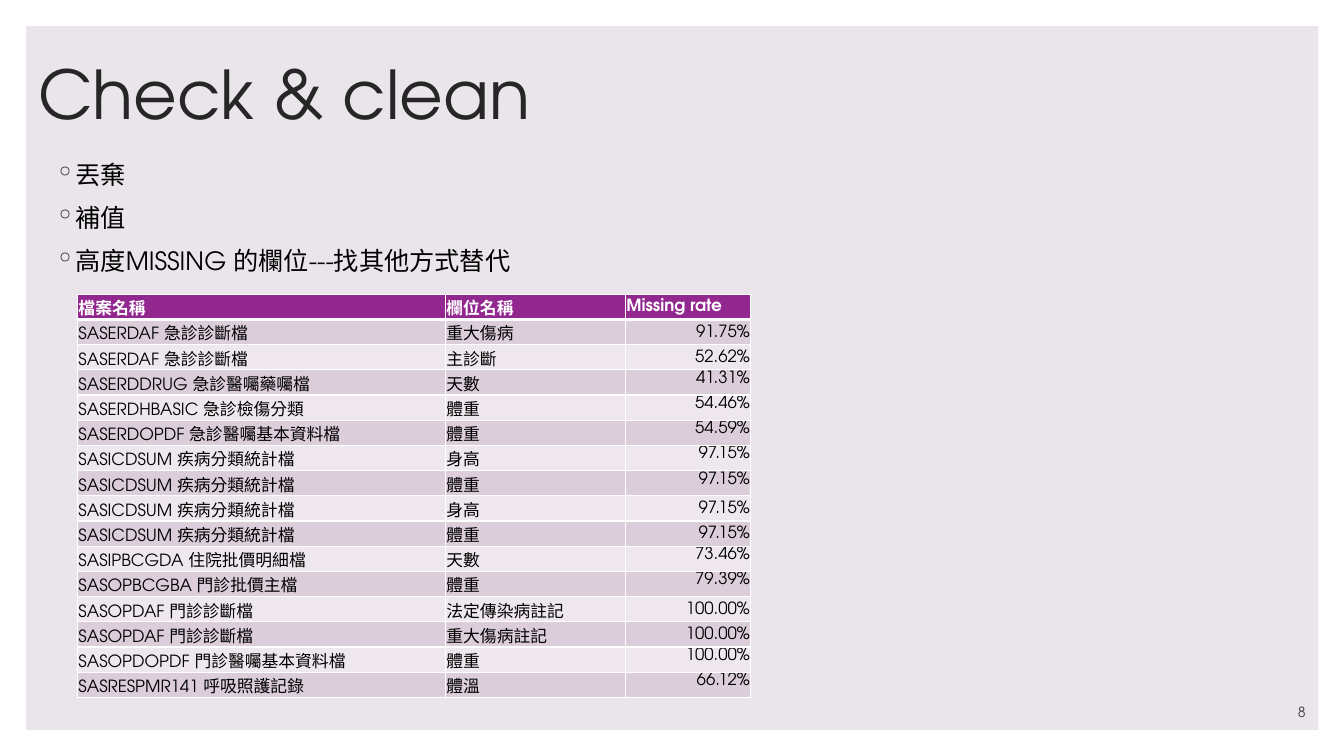
from lxml.etree import SubElement
from pptx import Presentation
from pptx.dml.color import RGBColor
from pptx.enum.shapes import MSO_SHAPE
from pptx.enum.text import MSO_ANCHOR, PP_ALIGN
from pptx.oxml.ns import qn
from pptx.util import Pt

HEADER = ("檔案名稱", "欄位名稱", "Missing rate")
MISSING_RATES = [
    ("SASERDAF 急診診斷檔", "重大傷病", "91.75%"),
    ("SASERDAF 急診診斷檔", "主診斷", "52.62%"),
    ("SASERDDRUG 急診醫囑藥囑檔", "天數", "41.31%"),
    ("SASERDHBASIC 急診檢傷分類", "體重", "54.46%"),
    ("SASERDOPDF 急診醫囑基本資料檔", "體重", "54.59%"),
    ("SASICDSUM 疾病分類統計檔", "身高", "97.15%"),
    ("SASICDSUM 疾病分類統計檔", "體重", "97.15%"),
    ("SASICDSUM 疾病分類統計檔", "身高", "97.15%"),
    ("SASICDSUM 疾病分類統計檔", "體重", "97.15%"),
    ("SASIPBCGDA 住院批價明細檔", "天數", "73.46%"),
    ("SASOPBCGBA 門診批價主檔", "體重", "79.39%"),
    ("SASOPDAF 門診診斷檔", "法定傳染病註記", "100.00%"),
    ("SASOPDAF 門診診斷檔", "重大傷病註記", "100.00%"),
    ("SASOPDOPDF 門診醫囑基本資料檔", "體重", "100.00%"),
    ("SASRESPMR141 呼吸照護記錄", "體溫", "66.12%"),
]
TOP_ROWS = {3, 4, 5, 6, 7, 10, 11, 14, 15}


def rgb(color):
    return RGBColor.from_string(color)


def write(p, text, size, color="000000", bold=False, align=PP_ALIGN.LEFT, east_asian=None):
    p.alignment = align
    r = p.add_run()
    r.text = text
    r.font.name = SlideBuilder.FONT
    r.font.size = Pt(size)
    r.font.bold = bold
    r.font.color.rgb = rgb(color)
    rPr = r._r.get_or_add_rPr()
    rPr.set("lang", "zh-TW")
    if east_asian:
        SubElement(rPr, qn("a:ea"), typeface=east_asian)


def add_bullet(p, char, color, indent):
    pPr = p._p.get_or_add_pPr()
    pPr.set("marL", str(Pt(indent)))
    pPr.set("indent", str(-Pt(indent)))
    SubElement(SubElement(pPr, qn("a:buClr")), qn("a:srgbClr"), val=color)
    SubElement(pPr, qn("a:buChar"), char=char)


def set_borders(cell, color, **widths):
    """Draw the cell sides given as L, R, T and B widths, in that order."""
    tcPr = cell._tc.get_or_add_tcPr()
    for i, (side, width) in enumerate(widths.items()):
        ln = tcPr.makeelement(qn(f"a:ln{side}"), {"w": str(Pt(width))})
        SubElement(SubElement(ln, qn("a:solidFill")), qn("a:srgbClr"), val=color)
        tcPr.insert(i, ln)


class SlideBuilder:
    FONT = "TeX Gyre Adventor"
    PANEL, WHITE, PURPLE = "EAE5EB", "FFFFFF", "92278F"
    BANDS = ("EEE8EE", "DCCDDB")
    DARK, GREY = "262626", "404040"

    def __init__(self, prs):
        self.s = prs.slides.add_slide(prs.slide_layouts[6])

    def panel(self, x, y, w, h):
        sp = self.s.shapes.add_shape(MSO_SHAPE.RECTANGLE, Pt(x), Pt(y), Pt(w), Pt(h))
        sp.shadow.inherit = False
        sp.fill.solid()
        sp.fill.fore_color.rgb = rgb(self.PANEL)
        sp.line.fill.background()

    def text_frame(self, x, y, w, h, anchor=MSO_ANCHOR.TOP):
        tf = self.s.shapes.add_textbox(Pt(x), Pt(y), Pt(w), Pt(h)).text_frame
        tf.word_wrap = True
        tf.vertical_anchor = anchor
        return tf

    def title(self, text, *box):
        p = self.text_frame(*box, anchor=MSO_ANCHOR.MIDDLE).paragraphs[0]
        p.line_spacing = 0.9
        write(p, text, 48, self.DARK)

    def bullets(self, items, *box):
        tf = self.text_frame(*box)
        for i, item in enumerate(items):
            p = tf.add_paragraph() if i else tf.paragraphs[0]
            p.space_before = Pt(9)
            add_bullet(p, "◦", self.DARK, 14.4)
            write(p, item, 18, east_asian=self.FONT)

    def page_number(self, number, *box):
        p = self.text_frame(*box, anchor=MSO_ANCHOR.BOTTOM).paragraphs[0]
        write(p, number, 10, self.GREY, align=PP_ALIGN.RIGHT)

    def table(self, rows, x, y, widths, row_height):
        table = self.s.shapes.add_table(
            len(rows), len(widths), Pt(x), Pt(y), Pt(sum(widths)), Pt(row_height * len(rows))
        ).table
        for column, width in zip(table.columns, widths):
            column.width = Pt(width)
        for i, row in enumerate(rows):
            table.rows[i].height = Pt(row_height)
            for j, text in enumerate(row):
                self.cell(table.cell(i, j), text, i, j)

    def cell(self, cell, text, i, j):
        header = i == 0
        cell.margin_left = cell.margin_right = cell.margin_top = Pt(0.7)
        cell.margin_bottom = Pt(0)
        cell.vertical_anchor = MSO_ANCHOR.TOP if i in TOP_ROWS else MSO_ANCHOR.MIDDLE
        cell.fill.solid()
        cell.fill.fore_color.rgb = rgb(self.PURPLE if header else self.BANDS[i % 2])
        set_borders(cell, self.WHITE, L=1, R=1, T=3 if i == 1 else 1, B=3 if header else 1)
        write(
            cell.text_frame.paragraphs[0], text, 12,
            color=self.WHITE if header else "000000", bold=header,
            align=PP_ALIGN.RIGHT if j == 2 and not header else PP_ALIGN.LEFT,
        )


def main():
    prs = Presentation()
    prs.slide_width, prs.slide_height = Pt(960), Pt(540)
    b = SlideBuilder(prs)
    b.panel(18.7, 18.7, 923, 502.6)
    b.title("Check & clean", 20.2, 15.8, 792, 108)
    b.bullets(["丟棄", "補值", "高度MISSING 的欄位---找其他方式替代"], 32.4, 110.2, 792, 344.9)
    b.page_number("8", 824.4, 496.8, 115.2, 21.6)
    b.table([HEADER, *MISSING_RATES], 55.4, 210.2, (262.8, 128.6, 89.6), 18)
    prs.save("out.pptx")


if __name__ == "__main__":
    main()
